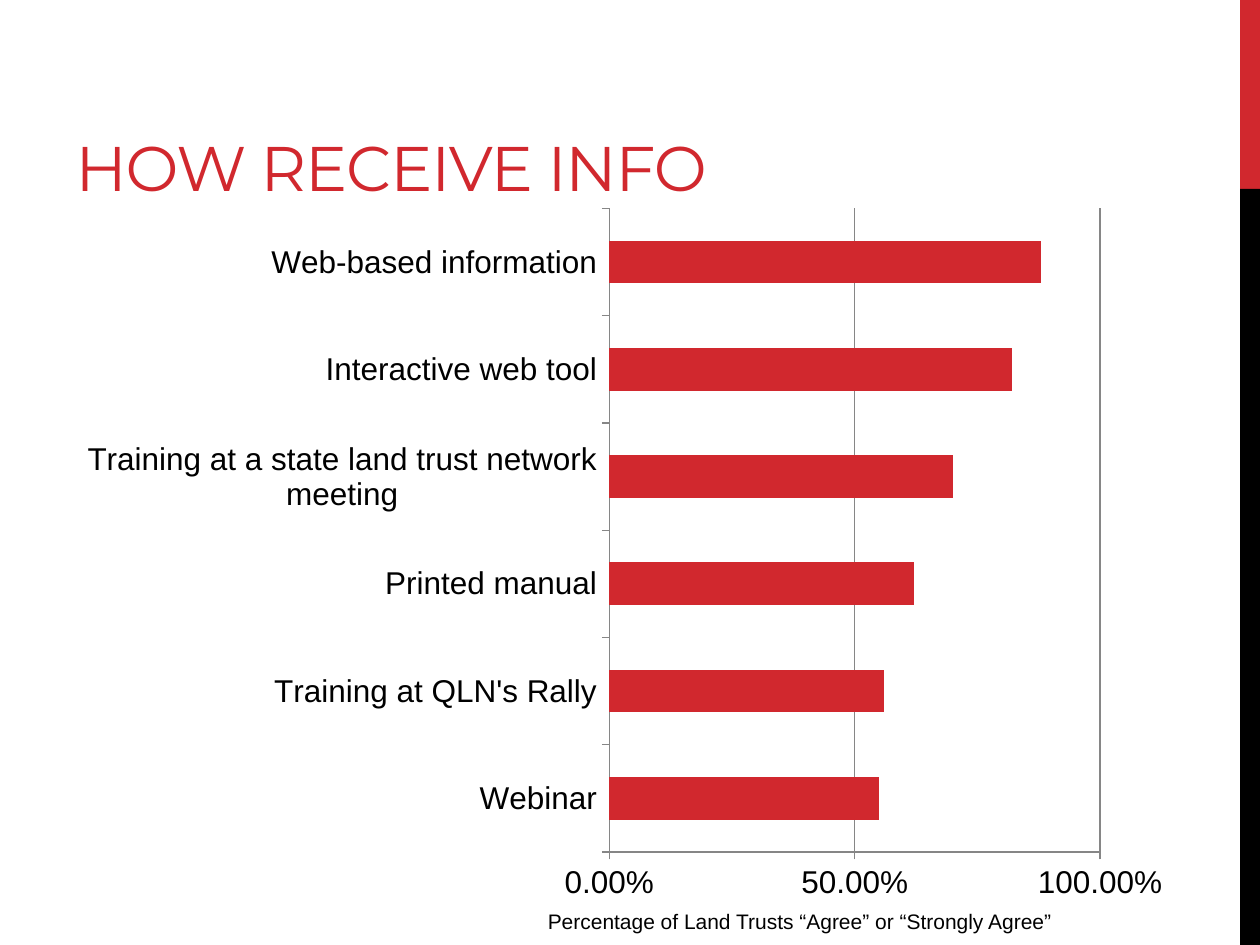
from lxml.etree import SubElement
from pptx import Presentation
from pptx.chart.data import CategoryChartData
from pptx.dml.color import RGBColor
from pptx.enum.chart import XL_CHART_TYPE as ChartType, XL_TICK_MARK as TickMark
from pptx.enum.shapes import MSO_SHAPE as Shape
from pptx.enum.text import MSO_ANCHOR as Anchor, PP_ALIGN as Align
from pptx.oxml.ns import qn
from pptx.util import Cm, Pt

COLORS = {"red": "D1282E", "black": "000000", "axis": "868686"}
RESPONSES = {
    "Webinar": 0.55,
    "Training at QLN's Rally": 0.56,
    "Printed manual": 0.62,
    "Training at a state land trust network meeting": 0.7,
    "Interactive web tool": 0.82,
    "Web-based information": 0.88,
}


def rgb(name):
    return RGBColor.from_string(COLORS[name])


def style_font(font, name, size, color):
    font.name, font.size, font.bold = name, Pt(size), False
    font.color.rgb = rgb(color)


def add_band(slide, top, height, color):
    band = slide.shapes.add_shape(Shape.RECTANGLE, Cm(25), top, Cm(0.4), height)
    band.shadow.inherit = False
    band.fill.solid()
    band.fill.fore_color.rgb = rgb(color)
    band.line.fill.background()


def set_title(slide, text):
    title = slide.shapes.title
    title.left, title.top, title.width, title.height = Cm(1.27), Cm(0.43), Cm(16.08), Cm(3.81)
    frame = title.text_frame
    frame.vertical_anchor = Anchor.BOTTOM
    frame.word_wrap = True
    heading = frame.paragraphs[0]
    heading.alignment = Align.LEFT
    run = heading.add_run()
    run.text = text
    style_font(run.font, "Montserrat", 36, "red")
    run._r.get_or_add_rPr().set("spc", "-60")


def fix_plot_area(chart, **fractions):
    """Place the inner plot area by fractions of the chart frame."""
    plot_area = chart._chartSpace.chart.plotArea
    for old in plot_area.findall(qn("c:layout")):
        plot_area.remove(old)
    layout = SubElement(plot_area, qn("c:layout"))
    plot_area.insert(0, layout)
    manual = SubElement(layout, qn("c:manualLayout"))
    settings = {"layoutTarget": "inner", "xMode": "edge", "yMode": "edge", **fractions}
    for tag, value in settings.items():
        SubElement(manual, qn(f"c:{tag}")).set("val", str(value))


def style_axis(axis):
    axis.major_tick_mark = TickMark.OUTSIDE
    axis.minor_tick_mark = TickMark.NONE
    axis.format.line.color.rgb = rgb("axis")
    style_font(axis.tick_labels.font, "Arial", 18, "black")


def add_response_chart(slide):
    data = CategoryChartData(number_format="0.00%")
    data.categories = RESPONSES.keys()
    data.add_series("Series 1", RESPONSES.values())
    chart = slide.shapes.add_chart(
        ChartType.BAR_CLUSTERED, Cm(1.27), Cm(3.91), Cm(22.48), Cm(14.58), data
    ).chart
    chart.has_legend = False
    chart.has_title = False
    style_font(chart.font, "Arial", 18, "black")
    fix_plot_area(chart, x=0.49, y=0.02, w=0.44, h=0.89)

    bars = chart.plots[0]
    bars.gap_width = 150
    bars.vary_by_categories = False
    fill = bars.series[0].format.fill
    fill.solid()
    fill.fore_color.rgb = rgb("red")

    style_axis(chart.category_axis)
    percent = chart.value_axis
    style_axis(percent)
    percent.minimum_scale, percent.maximum_scale, percent.major_unit = 0, 1, 0.5
    percent.has_major_gridlines = True
    percent.major_gridlines.format.line.color.rgb = rgb("axis")
    percent.tick_labels.number_format = "0.00%"
    percent.tick_labels.number_format_is_linked = False


def add_caption(slide, text):
    frame = slide.shapes.add_textbox(Cm(10.31), Cm(18.19), Cm(11.63), Cm(0.76)).text_frame
    frame.word_wrap = True
    caption = frame.paragraphs[0]
    caption.alignment = Align.CENTER
    run = caption.add_run()
    run.text = text
    style_font(run.font, "Arial", 12, "black")


def main():
    deck = Presentation()
    deck.slide_width, deck.slide_height = Cm(25.4), Cm(19.05)
    slide = deck.slides.add_slide(deck.slide_layouts[5])
    add_band(slide, Cm(0), Cm(3.81), "red")
    add_band(slide, Cm(3.81), Cm(15.24), "black")
    set_title(slide, "HOW RECEIVE INFO")
    add_response_chart(slide)
    add_caption(slide, "Percentage of Land Trusts “Agree” or “Strongly Agree”")
    deck.save("out.pptx")


if __name__ == "__main__":
    main()
